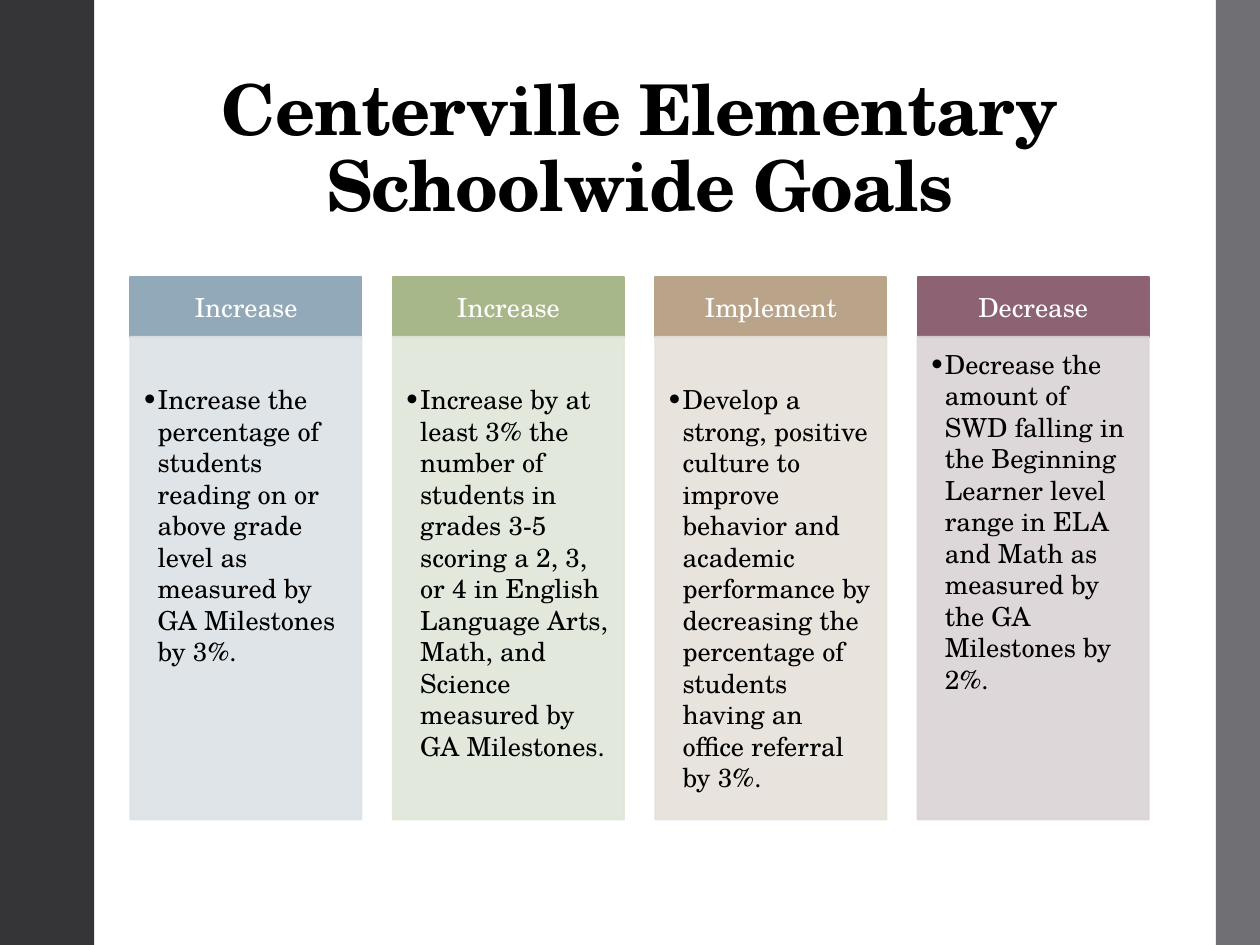
from dataclasses import dataclass

from lxml import etree
from pptx import Presentation
from pptx.dml.color import RGBColor
from pptx.enum.shapes import MSO_SHAPE
from pptx.enum.text import MSO_ANCHOR, MSO_AUTO_SIZE, PP_ALIGN
from pptx.oxml.ns import qn
from pptx.shapes.autoshape import Shape
from pptx.slide import Slide
from pptx.text.text import _Paragraph
from pptx.util import Cm, Pt

RECTANGLE = MSO_SHAPE.RECTANGLE
TOP, MIDDLE, BOTTOM = MSO_ANCHOR.TOP, MSO_ANCHOR.MIDDLE, MSO_ANCHOR.BOTTOM
LEFT, CENTER = PP_ALIGN.LEFT, PP_ALIGN.CENTER
NO_AUTOFIT = MSO_AUTO_SIZE.NONE

FONT = "TeX Gyre Schola"
COLORS = {
    "black": "000000",
    "white": "FFFFFF",
    "left bar": "353537",
    "right bar": "6F6F74",
    "blue": "92A9B9",
    "pale blue": "DCE2E6",
    "green": "A7B789",
    "pale green": "E1E6DA",
    "tan": "B9A489",
    "pale tan": "E6E0DA",
    "plum": "8D6374",
    "pale plum": "DBD3D6",
}

SLIDE_WIDTH, SLIDE_HEIGHT = 25.4, 19.05
COLUMN_LEFT, COLUMN_PITCH, COLUMN_WIDTH = 2.63, 5.29, 4.66
HEADER_TOP, HEADER_HEIGHT, BODY_HEIGHT = 5.59, 1.2, 9.73
HEADER_INSETS = (0.3, 0.17, 0.3, 0.17)
BODY_SIDE, BODY_TOP, LOWERED_TOP = 0.23, 0.23, 0.94


@dataclass
class Goal:
    heading: str
    text: str
    color: str
    body_top: float = LOWERED_TOP


GOALS = [
    Goal("Increase",
         "Increase the percentage of students reading on or above grade level "
         "as measured by GA Milestones by 3%.", "blue"),
    Goal("Increase",
         "Increase by at least 3% the number of students in grades 3-5 scoring "
         "a 2, 3, or 4 in English Language Arts, Math, and Science measured by "
         "GA Milestones.", "green"),
    Goal("Implement",
         "Develop a strong, positive culture to improve behavior and academic "
         "performance by decreasing the percentage of students having an "
         "office referral by 3%.", "tan"),
    Goal("Decrease",
         "Decrease the amount of SWD falling in the Beginning Learner level "
         "range in ELA and Math as measured by the GA Milestones by 2%.",
         "plum", BODY_TOP),
]


def rgb(name: str) -> RGBColor:
    return RGBColor.from_string(COLORS[name])


def add_box(slide: Slide, left: float, top: float, width: float,
            height: float, color: str) -> Shape:
    """Add a plain filled rectangle, measured in centimetres."""
    box = slide.shapes.add_shape(RECTANGLE, Cm(left), Cm(top), Cm(width), Cm(height))
    box.shadow.inherit = False
    box.fill.solid()
    box.fill.fore_color.rgb = rgb(color)
    box.line.fill.background()
    return box


def outline(box: Shape, color: str) -> None:
    box.line.color.rgb = rgb(color)
    box.line.width = Pt(1.1)


def set_opacity(box: Shape, percent: int) -> None:
    """Apply one opacity to both the fill and the line."""
    for color in box._element.spPr.iter(qn("a:srgbClr")):
        etree.SubElement(color, qn("a:alpha"), val=str(percent * 1000))


def set_frame(box: Shape, anchor: MSO_ANCHOR,
              insets: tuple[float, float, float, float]) -> _Paragraph:
    """Set up the text frame and return its first paragraph."""
    frame = box.text_frame
    frame.word_wrap = True
    frame.auto_size = NO_AUTOFIT
    frame.vertical_anchor = anchor
    (frame.margin_left, frame.margin_top,
     frame.margin_right, frame.margin_bottom) = map(Cm, insets)
    return frame.paragraphs[0]


def add_run(para: _Paragraph, text: str, size: float, color: str,
            bold: bool = False, spacing: int = 0) -> None:
    span = para.add_run()
    span.text = text
    span.font.name = FONT
    span.font.size = Pt(size)
    span.font.bold = bold
    span.font.color.rgb = rgb(color)
    if spacing:
        span._r.get_or_add_rPr().set("spc", str(spacing))


def add_bullet(para: _Paragraph) -> None:
    properties = para._p.get_or_add_pPr()
    properties.set("marL", str(Cm(0.32)))
    properties.set("indent", str(-Cm(0.32)))
    etree.SubElement(properties, qn("a:buFont"), typeface=FONT)
    etree.SubElement(properties, qn("a:buChar"), char="•")


def write_title(slide: Slide) -> None:
    title = slide.shapes.title
    title.left, title.top = Cm(2.62), Cm(1.02)
    title.width, title.height = Cm(20.55), Cm(3.68)
    para = set_frame(title, BOTTOM, (0.25, 0.13, 0.25, 0.13))
    para.alignment = CENTER
    para.line_spacing = 0.9
    add_run(para, "Centerville Elementary", 40, "black", True, -50)
    para.add_line_break()
    add_run(para, "Schoolwide Goals", 40, "black", True, -50)


def add_goal(slide: Slide, goal: Goal, left: float) -> None:
    header = add_box(slide, left, HEADER_TOP, COLUMN_WIDTH, HEADER_HEIGHT, goal.color)
    outline(header, goal.color)
    para = set_frame(header, MIDDLE, HEADER_INSETS)
    para.alignment = CENTER
    add_run(para, goal.heading, 15, "white")

    pale = f"pale {goal.color}"
    body = add_box(slide, left, HEADER_TOP + HEADER_HEIGHT, COLUMN_WIDTH, BODY_HEIGHT, pale)
    outline(body, pale)
    set_opacity(body, 90)
    para = set_frame(body, TOP, (BODY_SIDE, goal.body_top, 0.3, 0.33))
    para.alignment = LEFT
    add_bullet(para)
    add_run(para, goal.text, 15, "black")


def main() -> None:
    deck = Presentation()
    deck.slide_width, deck.slide_height = Cm(SLIDE_WIDTH), Cm(SLIDE_HEIGHT)
    page = deck.slides.add_slide(deck.slide_layouts[5])
    write_title(page)
    add_box(page, 0, 0, 1.9, SLIDE_HEIGHT, "left bar")
    add_box(page, 24.51, 0, SLIDE_WIDTH - 24.51, SLIDE_HEIGHT, "right bar")
    for index, goal in enumerate(GOALS):
        add_goal(page, goal, COLUMN_LEFT + index * COLUMN_PITCH)
    deck.save("out.pptx")


if __name__ == "__main__":
    main()
